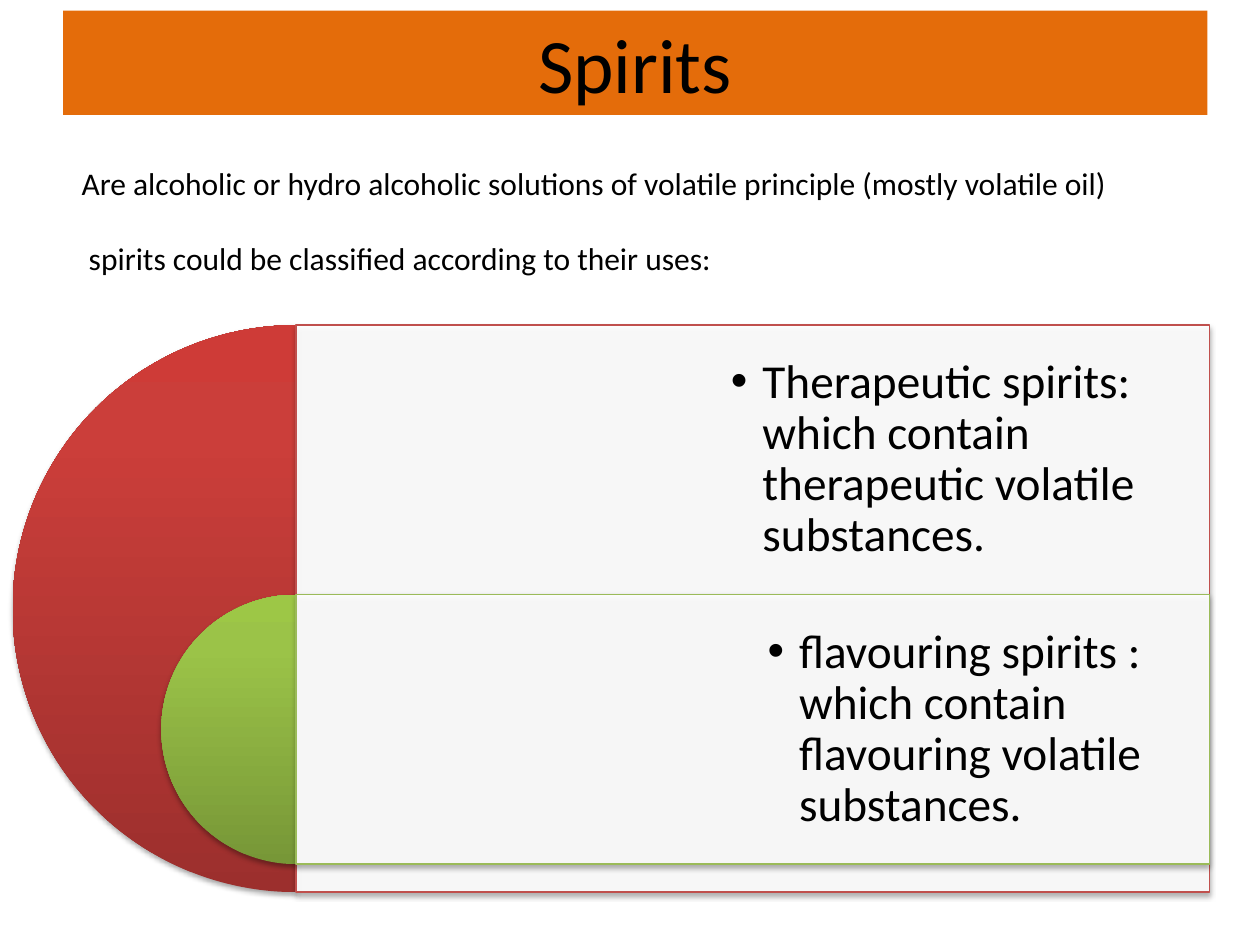
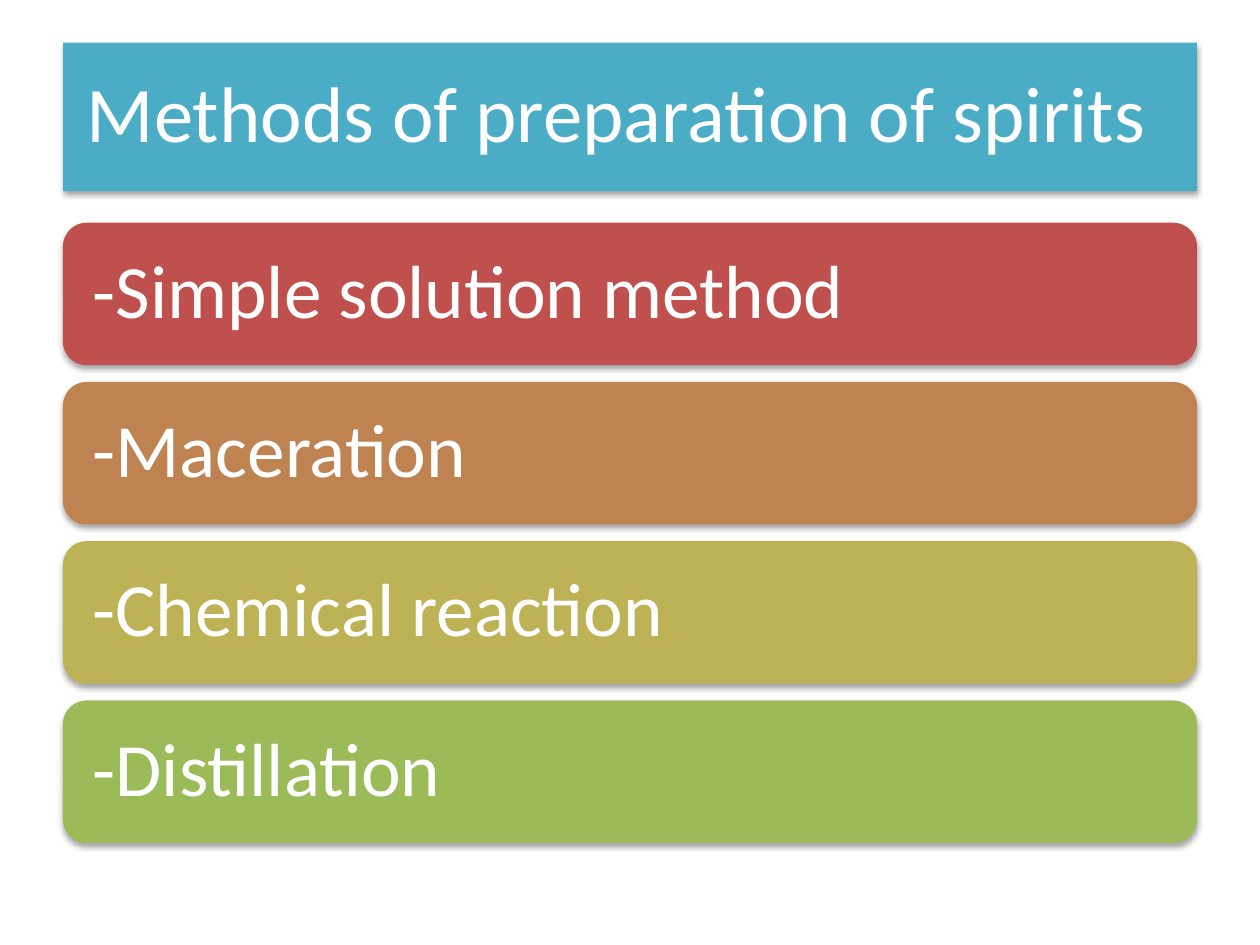
from lxml.etree import SubElement
from pptx import Presentation
from pptx.dml.color import RGBColor
from pptx.enum.shapes import MSO_SHAPE
from pptx.enum.text import MSO_ANCHOR, MSO_AUTO_SIZE, PP_ALIGN
from pptx.oxml.ns import qn
from pptx.util import Pt

FONT = "Calibri"
BLACK = RGBColor(0x00, 0x00, 0x00)
WHITE = RGBColor(0xFF, 0xFF, 0xFF)
ORANGE = RGBColor(0xE4, 0x6C, 0x0A)
TEAL = RGBColor(0x4B, 0xAC, 0xC6)
RED = RGBColor(0xC0, 0x50, 0x4D)
BROWN = RGBColor(0xBE, 0x83, 0x51)
OLIVE = RGBColor(0xBD, 0xB2, 0x55)
GREEN = RGBColor(0x9B, 0xBB, 0x59)
RED_STOPS = (
    (0, RGBColor(0x9C, 0x2F, 0x2D)),
    (80, RGBColor(0xCB, 0x3E, 0x3A)),
    (100, RGBColor(0xCE, 0x3B, 0x37)),
)
GREEN_STOPS = (
    (0, RGBColor(0x77, 0x97, 0x37)),
    (80, RGBColor(0x9B, 0xC3, 0x48)),
    (100, RGBColor(0x9D, 0xC7, 0x46)),
)

PANEL_LEFT, PANEL_WIDTH = 169.2, 522
BAR_LEFT, BAR_WIDTH = 36, 648


def add_color(parent, color, alpha=None):
    clr = SubElement(parent, qn("a:srgbClr"), val=str(color))
    if alpha is not None:
        SubElement(clr, qn("a:alpha"), val=str(alpha * 1000))


def add_shadow(sp):
    sp.shadow.inherit = False
    effects = sp._element.spPr.find(qn("a:effectLst"))
    shadow = SubElement(effects, qn("a:outerShdw"), blurRad=str(Pt(3.1)),
                        dist=str(Pt(1.8)), dir="5400000", rotWithShape="0")
    add_color(shadow, BLACK, 35)


def fill_solid(sp, color):
    sp.fill.solid()
    sp.fill.fore_color.rgb = color
    sp.line.fill.background()


def fill_gradient(sp, stops):
    sp.fill.gradient()
    sp.fill.gradient_angle = 90
    stop_list = sp._element.spPr.find(qn("a:gradFill")).find(qn("a:gsLst"))
    stop_list.clear()
    for position, color in stops:
        stop = SubElement(stop_list, qn("a:gs"), pos=str(position * 1000))
        add_color(stop, color)
    sp.line.fill.background()


def set_frame(tf, inset, anchor=MSO_ANCHOR.MIDDLE):
    tf.word_wrap = True
    tf.auto_size = MSO_AUTO_SIZE.NONE
    tf.vertical_anchor = anchor
    tf.margin_left = tf.margin_right = Pt(inset)
    tf.margin_top = tf.margin_bottom = Pt(inset)


def add_run(p, text, size, color):
    r = p.add_run()
    r.text = text
    r.font.name = FONT
    r.font.size = Pt(size)
    r.font.color.rgb = color


def place(sp, left, top, width, height):
    sp.left, sp.top = Pt(left), Pt(top)
    sp.width, sp.height = Pt(width), Pt(height)


def write_bar_text(sp, text, size, inset):
    set_frame(sp.text_frame, inset)
    p = sp.text_frame.paragraphs[0]
    p.alignment = PP_ALIGN.LEFT
    p.line_spacing = 0.9
    add_run(p, text, size, WHITE)


def add_half_disc(s, top, size, stops):
    sp = s.shapes.add_shape(MSO_SHAPE.PIE, Pt(PANEL_LEFT - size / 2), Pt(top),
                            Pt(size), Pt(size))
    sp.adjustments[0], sp.adjustments[1] = 54, 162
    fill_gradient(sp, stops)
    add_shadow(sp)


def add_panel(s, top, height, line_color):
    sp = s.shapes.add_shape(MSO_SHAPE.RECTANGLE, Pt(PANEL_LEFT), Pt(top),
                            Pt(PANEL_WIDTH), Pt(height))
    fill_solid(sp, WHITE)
    clr = sp._element.spPr.find(qn("a:solidFill"))[0]
    SubElement(clr, qn("a:alpha"), val="90000")
    sp.line.color.rgb = line_color
    sp.line.width = Pt(0.75)
    add_shadow(sp)


def add_bullet_text(s, left, top, width, height, text):
    sp = s.shapes.add_textbox(Pt(left), Pt(top), Pt(width), Pt(height))
    set_frame(sp.text_frame, 8)
    p = sp.text_frame.paragraphs[0]
    p.line_spacing = 0.9
    p_pr = p._p.get_or_add_pPr()
    p_pr.set("marL", str(Pt(18)))
    p_pr.set("indent", str(Pt(-18)))
    SubElement(p_pr, qn("a:buFont"), typeface="Arial")
    SubElement(p_pr, qn("a:buChar"), char="•")
    add_run(p, text, 27, BLACK)


def add_intro(s, lines):
    sp = s.shapes.add_textbox(Pt(39.6), Pt(90), Pt(635.8), Pt(94.3))
    tf = sp.text_frame
    set_frame(tf, 3.6, MSO_ANCHOR.TOP)
    tf.margin_left = tf.margin_right = Pt(7.2)
    for i, line in enumerate(lines):
        p = tf.add_paragraph() if i else tf.paragraphs[0]
        p.space_after = Pt(0 if i else 21.5)
        add_run(p, line, 18, BLACK)


def add_method_bar(s, top, height, text, color):
    sp = s.shapes.add_shape(MSO_SHAPE.ROUNDED_RECTANGLE, Pt(BAR_LEFT), Pt(top),
                            Pt(BAR_WIDTH), Pt(height))
    fill_solid(sp, color)
    add_shadow(sp)
    write_bar_text(sp, text, 43, 13)


def build_spirits(prs):
    s = prs.slides.add_slide(prs.slide_layouts[5])
    title = s.shapes.title
    place(title, 36, 6, 654, 59.6)
    fill_solid(title, ORANGE)
    set_frame(title.text_frame, 3.6)
    p = title.text_frame.paragraphs[0]
    p.alignment = PP_ALIGN.CENTER
    add_run(p, "Spirits", 44, BLACK)

    outer_top, outer_size = 185.8, 324
    inner_top, inner_size = 339.8, 154
    add_half_disc(s, outer_top, outer_size, RED_STOPS)
    add_panel(s, outer_top, outer_size, RED)
    add_half_disc(s, inner_top, inner_size, GREEN_STOPS)
    add_panel(s, inner_top, inner_size, GREEN)
    add_bullet_text(s, 409.7, outer_top, 303, inner_size,
                    "Therapeutic spirits: which contain therapeutic "
                    "volatile substances.")
    add_bullet_text(s, 430.6, inner_top, 260.6, inner_size,
                    "flavouring spirits : which contain flavouring "
                    "volatile substances.")
    add_intro(s, (
        "Are alcoholic or hydro alcoholic solutions of volatile principle "
        "(mostly volatile oil)",
        " spirits could be classified according to their uses:",
    ))


def build_methods(prs):
    s = prs.slides.add_slide(prs.slide_layouts[5])
    title = s.shapes.title
    place(title, BAR_LEFT, 24.3, BAR_WIDTH, 85)
    geom = SubElement(title._element.spPr, qn("a:prstGeom"), prst="roundRect")
    SubElement(geom, qn("a:avLst"))
    fill_solid(title, TEAL)
    add_shadow(title)
    write_bar_text(title, "Methods of preparation of spirits", 45, 13.7)

    methods = (
        ("-Simple solution method", RED),
        ("-Maceration", BROWN),
        ("-Chemical reaction", OLIVE),
        ("-Distillation", GREEN),
    )
    for i, (text, color) in enumerate(methods):
        add_method_bar(s, 127.3 + 91 * i, 81.4, text, color)


def main():
    prs = Presentation()
    prs.slide_width, prs.slide_height = Pt(720), Pt(540)
    build_spirits(prs)
    build_methods(prs)
    prs.save("out.pptx")


if __name__ == "__main__":
    main()
